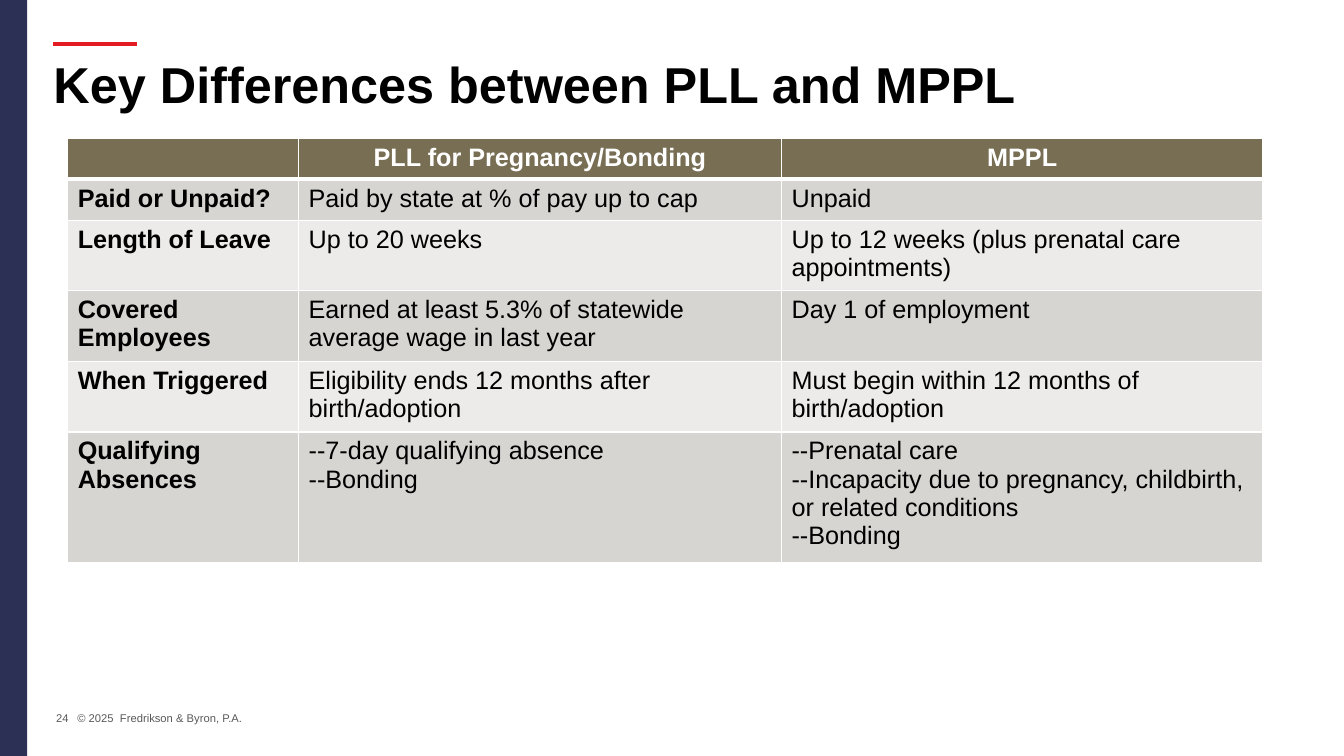
from pptx import Presentation
from pptx.dml.color import RGBColor
from pptx.enum.shapes import MSO_CONNECTOR, MSO_SHAPE
from pptx.enum.text import MSO_ANCHOR, PP_ALIGN
from pptx.oxml import parse_xml
from pptx.oxml.ns import nsdecls
from pptx.oxml.xmlchemy import OxmlElement
from pptx.util import Pt

COLORS = {
    "navy": "2C3054",
    "red": "E31B23",
    "header": "786E54",
    "dark band": "D6D5D1",
    "light band": "ECEBE9",
    "black": "000000",
    "white": "FFFFFF",
    "gray": "595959",
}
COLUMN_WIDTHS = [164.9, 345, 343.8]
ROW_HEIGHTS = [29.2, 29.2, 47.5, 47.5, 47.5, 88]
ROWS = [
    ["", "PLL for Pregnancy/Bonding", "MPPL"],
    ["Paid or Unpaid?", "Paid by state at % of pay up to cap", "Unpaid"],
    ["Length of Leave", "Up to 20 weeks",
     "Up to 12 weeks (plus prenatal care appointments)"],
    ["Covered Employees",
     "Earned at least 5.3% of statewide average wage in last year",
     "Day 1 of employment"],
    ["When Triggered", "Eligibility ends 12 months after birth/adoption",
     "Must begin within 12 months of birth/adoption"],
    ["Qualifying Absences", "--7-day qualifying absence\n--Bonding",
     "--Prenatal care\n--Incapacity due to pregnancy, childbirth, "
     "or related conditions\n--Bonding"],
]


def rgb(name):
    return RGBColor.from_string(COLORS[name])


def write_text(frame, text, size=18, color="black", bold=False,
               align=PP_ALIGN.LEFT, spacing=1.0):
    """Fill a text frame, one paragraph for each line of text."""
    frame.word_wrap = True
    frame.text = text
    for para in frame.paragraphs:
        para.alignment = align
        para.line_spacing = spacing
        font = para.font
        font.name = "Arial"
        font.size = Pt(size)
        font.bold = bold
        font.color.rgb = rgb(color)


def add_title(slide, text):
    title = slide.shapes.title
    title.left, title.top = Pt(38.2), Pt(28.1)
    title.width, title.height = Pt(885.6), Pt(57.6)
    frame = title.text_frame
    frame.margin_left, frame.margin_top = Pt(0), Pt(14.4)
    frame.margin_right, frame.margin_bottom = Pt(7.2), Pt(3.6)
    frame.vertical_anchor = MSO_ANCHOR.TOP
    write_text(frame, text, size=36, bold=True, spacing=0.9)


def add_footer_text(slide, left, top, width, height, text, **text_format):
    box = slide.shapes.add_textbox(Pt(left), Pt(top), Pt(width), Pt(height))
    box.text_frame.vertical_anchor = MSO_ANCHOR.MIDDLE
    write_text(box.text_frame, text, size=8, color="gray", **text_format)


def add_side_bar(slide):
    bar = slide.shapes.add_shape(MSO_SHAPE.RECTANGLE, Pt(0), Pt(0), Pt(19.5), Pt(540))
    bar.shadow.inherit = False
    bar.fill.solid()
    bar.fill.fore_color.rgb = rgb("navy")
    bar.line.fill.background()


def add_accent_line(slide):
    accent = slide.shapes.add_connector(
        MSO_CONNECTOR.STRAIGHT, Pt(38.2), Pt(31.7), Pt(97.9), Pt(31.7))
    accent.line.color.rgb = rgb("red")
    accent.line.width = Pt(3)
    accent._element.spPr.append(OxmlElement("a:effectLst"))


def set_borders(cell, **widths):
    """Draw white borders; each keyword is a side tag and its width in points."""
    properties = cell._tc.get_or_add_tcPr()
    for position, (side, width) in enumerate(widths.items()):
        properties.insert(position, parse_xml(
            f'<a:{side} {nsdecls("a")} w="{Pt(width)}"><a:solidFill>'
            f'<a:srgbClr val="{COLORS["white"]}"/></a:solidFill></a:{side}>'))


def add_comparison_table(slide):
    table = slide.shapes.add_table(
        len(ROWS), len(COLUMN_WIDTHS), Pt(48.4), Pt(98.9),
        Pt(sum(COLUMN_WIDTHS)), Pt(sum(ROW_HEIGHTS))).table
    for column, width in zip(table.columns, COLUMN_WIDTHS):
        column.width = Pt(width)
    for row, height in zip(table.rows, ROW_HEIGHTS):
        row.height = Pt(height)
    for row_index, texts in enumerate(ROWS):
        is_header = row_index == 0
        band = "dark band" if row_index % 2 else "light band"
        for column_index, text in enumerate(texts):
            cell = table.cell(row_index, column_index)
            cell.fill.solid()
            cell.fill.fore_color.rgb = rgb("header" if is_header else band)
            set_borders(cell, lnL=1, lnR=1, lnT=3 if row_index == 1 else 1,
                        lnB=3 if is_header else 1)
            write_text(cell.text_frame, text,
                       color="white" if is_header else "black",
                       bold=is_header or column_index == 0,
                       align=PP_ALIGN.CENTER if is_header else PP_ALIGN.LEFT)


def main():
    deck = Presentation()
    deck.slide_width, deck.slide_height = Pt(960), Pt(540)
    slide = deck.slides.add_slide(deck.slide_layouts[5])
    add_footer_text(slide, 48.2, 504, 139.7, 18, "© 2025  Fredrikson & Byron, P.A.")
    add_side_bar(slide)
    add_accent_line(slide)
    add_title(slide, "Key Differences between PLL and MPPL")
    add_footer_text(slide, 24.5, 502.6, 31.7, 20.2, "24", align=PP_ALIGN.RIGHT)
    add_comparison_table(slide)
    deck.save("out.pptx")


if __name__ == "__main__":
    main()
